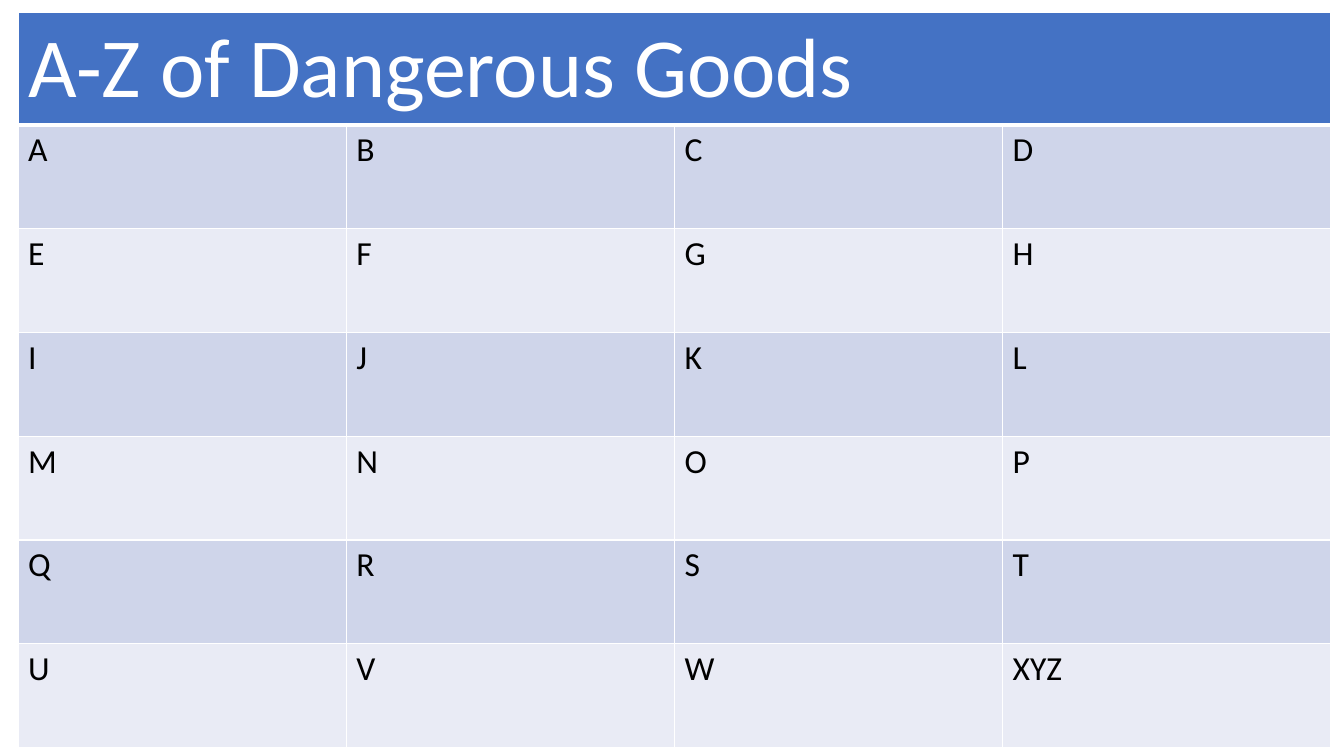
import pptx
import pptx.dml.color
import pptx.util
from lxml import etree
from pptx.oxml import ns

Inches = pptx.util.Inches
Color = pptx.dml.color.RGBColor

WHITE = Color(0xFF, 0xFF, 0xFF)
BLACK = Color(0x00, 0x00, 0x00)
BLUE = Color(0x44, 0x72, 0xC4)
BANDS = (Color(0xCF, 0xD5, 0xEA), Color(0xE9, 0xEB, 0xF5))

TITLE = "A-Z of Dangerous Goods"
GOODS = [*"ABCDEFGHIJKLMNOPQRSTUVW", "XYZ"]
COLS = 4


def put_text(frame, text, font="Calibri", size=24, color=BLACK, bold=False):
    """Write one formatted run into a text frame."""
    run = frame.paragraphs[0].add_run()
    run.text = text
    run.font.name = font
    run.font.size = pptx.util.Pt(size)
    run.font.color.rgb = color
    run.font.bold = bold


class Deck:
    """Holds the table style and the current slide."""

    def __init__(self):
        self.show = pptx.Presentation()
        self.show.slide_width = Inches(13.33)
        self.show.slide_height = Inches(7.5)
        self.slide = self.show.slides.add_slide(self.show.slide_layouts[6])
        self.edge = WHITE

    def border(self, cell, **widths):
        """Draw the cell's four sides; widths override 1 pt by side."""
        props = cell._tc.get_or_add_tcPr()
        for side in "LRTB":
            width = pptx.util.Pt(widths.get(side, 1))
            line = etree.SubElement(props, ns.qn("a:ln" + side), w=str(width))
            fill = etree.SubElement(line, ns.qn("a:solidFill"))
            etree.SubElement(fill, ns.qn("a:srgbClr"), val=str(self.edge))

    def cell(self, cell, fill, text="", widths=None, **style):
        self.border(cell, **(widths or {}))
        cell.fill.solid()
        cell.fill.fore_color.rgb = fill
        if text:
            put_text(cell.text_frame, text, **style)

    def table(self, left, top, width, head, row, count):
        """Add a grid with one taller head row above equal rows."""
        frame = self.slide.shapes.add_table(
            count + 1, COLS, Inches(left), Inches(top),
            Inches(width), Inches(head + row * count))
        grid = frame.table
        for col in grid.columns:
            col.width = Inches(width / COLS)
        for num, line in enumerate(grid.rows):
            line.height = Inches(row if num else head)
        return grid


def main():
    deck = Deck()
    rows = len(GOODS) // COLS
    grid = deck.table(0.18, 0.12, 13.02, 1.11, 1.03, rows)

    # Heading across all columns
    grid.cell(0, 0).merge(grid.cell(0, COLS - 1))
    for col in range(COLS):
        deck.cell(grid.cell(0, col), BLUE, "" if col else TITLE,
                  {"B": 3}, size=60, color=WHITE)

    # Letters in banded rows
    for num, name in enumerate(GOODS):
        row, col = divmod(num, COLS)
        widths = {} if row else {"T": 3}
        deck.cell(grid.cell(row + 1, col), BANDS[row % 2], name, widths)

    deck.show.save("out.pptx")


if __name__ == "__main__":
    main()
